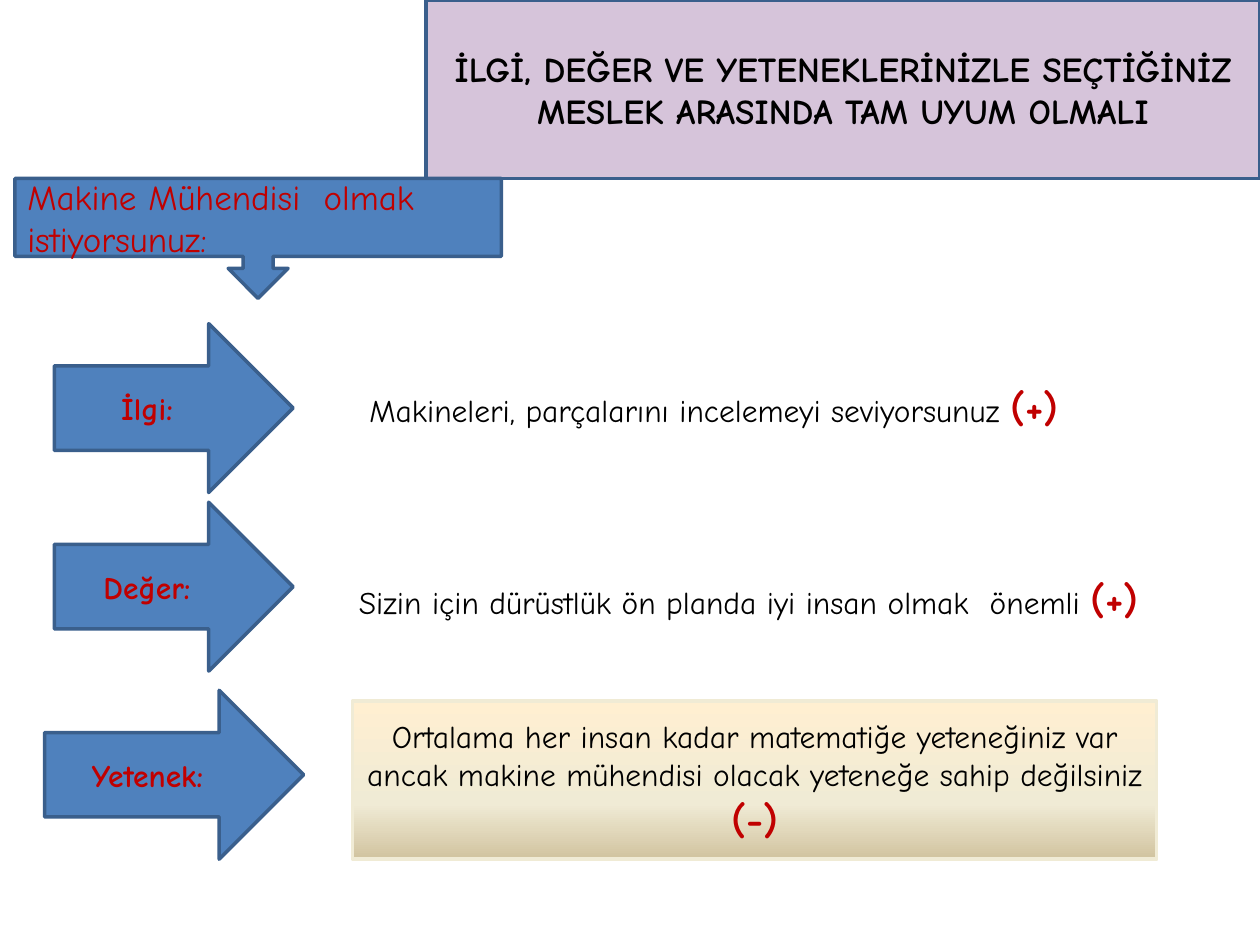
"""Build a slide on matching interests, values and abilities to a profession."""
import copy
import dataclasses

import pptx
import pptx.dml.color
import pptx.enum.shapes
import pptx.enum.text
import pptx.oxml.ns
import pptx.util

Pt = pptx.util.Pt
Shape = pptx.enum.shapes.MSO_SHAPE
Align = pptx.enum.text.PP_ALIGN
Anchor = pptx.enum.text.MSO_ANCHOR


@dataclasses.dataclass(frozen=True)
class Theme:
    """Colours, font and type sizes of the slide."""
    font: str = "Comic Neue"
    ink: str = "000000"
    accent: str = "C00000"
    blue: str = "4F81BD"
    outline: str = "3A5F8C"
    lilac: str = "D6C4DA"
    cream: str = "F0EBD5"
    gradient: tuple = ((0, "FFEFD1"), (0.65, "F0EBD5"), (1, "D1C39F"))
    heading: int = 20
    body: int = 18
    mark: int = 24
    line: int = 2


THEME = Theme()


def colour(value):
    """Turn a hex string into a colour."""
    return pptx.dml.color.RGBColor.from_string(value)


def paint(box, fill, outline):
    """Give a box a solid fill and an outline."""
    box.fill.solid()
    box.fill.fore_color.rgb = colour(fill)
    box.line.color.rgb = colour(outline)
    box.line.width = Pt(THEME.line)


def paint_gradient(box):
    """Replace the fill of a box with the vertical theme gradient."""
    box.fill.gradient()
    box.fill.gradient_angle = 270
    stops = next(box._element.spPr.iter(pptx.oxml.ns.qn("a:gsLst")))
    stops.append(copy.deepcopy(stops[-1]))
    for stop, (position, value) in zip(box.fill.gradient_stops, THEME.gradient):
        stop.position = position
        stop.color.rgb = colour(value)


def write(box, text, size, value, bold=False, align=Align.CENTER, mark=None):
    """Write one paragraph, optionally ending in a large bold mark."""
    frame = box.text_frame
    frame.word_wrap = True
    frame.auto_size = pptx.enum.text.MSO_AUTO_SIZE.NONE
    frame.vertical_anchor = Anchor.MIDDLE
    para = frame.paragraphs[0]
    para.alignment = align
    para.font.name = THEME.font
    para.font.size = Pt(size)
    para.font.bold = bold
    para.font.color.rgb = colour(value)
    para.add_run().text = text
    if mark:
        span = para.add_run()
        span.text = mark
        span.font.size = Pt(THEME.mark)
        span.font.bold = True
        span.font.color.rgb = colour(THEME.accent)


def add_title(page, text):
    """Place the title in a lilac panel at the top right."""
    box = page.shapes.title
    box.left, box.top, box.width, box.height = map(Pt, (243.5, 0, 476.5, 102))
    paint(box, THEME.lilac, THEME.outline)
    write(box, text, THEME.heading, THEME.ink, bold=True)


def add_block(page, kind, place, fill=THEME.blue, outline=THEME.outline):
    """Add a filled preset shape without a shadow."""
    box = page.shapes.add_shape(kind, *map(Pt, place))
    box.shadow.inherit = False
    paint(box, fill, outline)
    return box


def add_arrow(page, label, left, top, width):
    """Add a labelled arrow pointing right."""
    box = add_block(page, Shape.RIGHT_ARROW, (left, top, width, 96.5))
    write(box, label, THEME.body, THEME.accent, bold=True)


def add_statement(page, text, mark, left, top):
    """Add a one-line statement with its mark."""
    box = page.shapes.add_textbox(Pt(left), Pt(top), Pt(480), Pt(29))
    frame = box.text_frame
    frame.margin_left = frame.margin_right = 0
    frame.margin_top = frame.margin_bottom = 0
    write(box, text, THEME.body, THEME.ink, align=Align.LEFT, mark=mark)


def main():
    """Compose the slide and save the deck."""
    deck = pptx.Presentation()
    deck.slide_width, deck.slide_height = Pt(720), Pt(540)
    page = deck.slides.add_slide(deck.slide_layouts.get_by_name("Title Only"))
    add_title(page, "İLGİ, DEĞER VE YETENEKLERİNİZLE SEÇTİĞİNİZ "
                    "MESLEK ARASINDA TAM UYUM OLMALI")

    goal = add_block(page, Shape.DOWN_ARROW_CALLOUT, (8.5, 102, 278, 68.5))
    write(goal, "Makine Mühendisi  olmak istiyorsunuz:",
          THEME.heading, THEME.accent, align=Align.LEFT)

    add_arrow(page, "İlgi: ", 31, 185, 136.5)
    add_arrow(page, "Değer: ", 31, 287, 136.5)
    add_arrow(page, "Yetenek: ", 25.5, 394.5, 148)

    add_statement(page, "Makineleri, parçalarını incelemeyi seviyorsunuz ",
                  "(+)", 211, 217.5)
    add_statement(page, "Sizin için dürüstlük ön planda iyi insan olmak  önemli ",
                  "(+)", 205, 327)

    ability = add_block(page, Shape.RECTANGLE, (201.5, 400.5, 459.5, 90.5),
                        THEME.cream, THEME.cream)
    paint_gradient(ability)
    write(ability, "Ortalama her insan kadar matematiğe yeteneğiniz var ancak "
                   "makine mühendisi olacak yeteneğe sahip değilsiniz ",
          THEME.body, THEME.ink, mark="(-)")
    deck.save("out.pptx")


if __name__ == "__main__":
    main()
